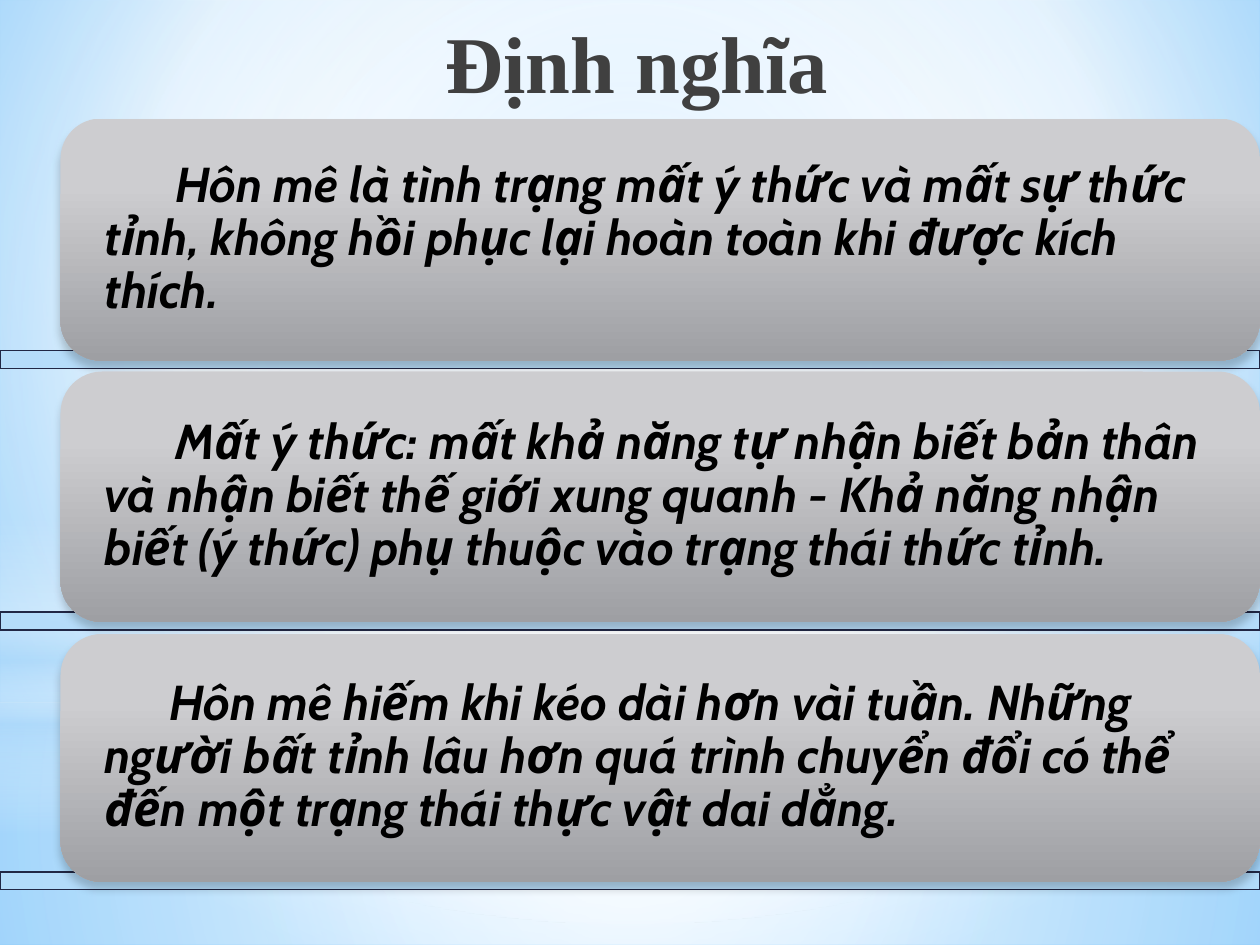
from typing import NamedTuple

from lxml.etree import SubElement as Sub
from pptx import Presentation
from pptx.dml.color import RGBColor as Rgb
from pptx.enum.shapes import MSO_SHAPE as Kind
from pptx.enum.text import MSO_ANCHOR as Anchor, PP_ALIGN as Align
from pptx.oxml import parse_xml
from pptx.oxml.ns import nsdecls, qn
from pptx.util import Cm, Pt

HUES = {
    "white": "FFFFFF", "black": "000000", "title": "404040",
    "sky": "B4DCFA", "navy": "212745", "pale": "9ED5FF", "deep": "5BB9FF",
    "light": "CDCDD0", "dark": "9E9FA3",
}
WIDE, HIGH = 25.4, 19.05


class Stop(NamedTuple):
    pos: int
    hue: str
    alpha: int = 100


class Wash(NamedTuple):
    kind: Kind
    top: float
    high: float
    stops: list[Stop]
    focus: tuple | None = (50, 50, 50, 50)


class Card(NamedTuple):
    top: float
    high: float
    tab: float
    text: str


BACK = [Stop(0, "pale"), Stop(60, "white"), Stop(100, "deep")]
STEEL = [Stop(28, "light"), Stop(100, "dark")]
WASHES = [
    Wash(Kind.RECTANGLE, 14.17, 4.88,
         [Stop(0, "white", 91), Stop(37, "white", 76), Stop(100, "sky", 79)]),
    Wash(Kind.RECTANGLE, 0, 14.17,
         [Stop(0, "white", 89), Stop(48, "white", 62), Stop(100, "sky", 79)]),
    Wash(Kind.RECTANGLE, 10.46, 6.35,
         [Stop(0, "white", 0), Stop(29, "white", 30), Stop(45, "sky", 40),
          Stop(55, "white", 26), Stop(65, "sky", 60), Stop(100, "white", 0)],
         None),
    Wash(Kind.OVAL, 4.45, 14.17, [Stop(0, "white"), Stop(56, "white", 0)]),
]
CARDS = [
    Card(2.39, 4.88, 1.42,
         "Hôn mê là tình trạng mất ý thức và mất sự thức tỉnh, "
         "không hồi phục lại hoàn toàn khi được kích thích."),
    Card(7.49, 5.05, 1.42,
         "Mất ý thức: mất khả năng tự nhận biết bản thân và nhận biết "
         "thế giới xung quanh - Khả năng nhận biết (ý thức) phụ thuộc "
         "vào trạng thái thức tỉnh."),
    Card(12.78, 5, 1.3,
         "Hôn mê hiếm khi kéo dài hơn vài tuần. Những người bất tỉnh lâu "
         "hơn quá trình chuyển đổi có thể đến một trạng thái thực vật "
         "dai dẳng."),
]


def tint(box, hue: str, alpha: int) -> None:
    """Add a colour with its opacity to an XML element."""
    clr = Sub(box, qn("a:srgbClr"), val=HUES[hue])
    if alpha < 100:
        Sub(clr, qn("a:alpha"), val=str(alpha * 1000))


def blend(fill, owner, stops: list[Stop], focus: tuple | None = None) -> None:
    """Give a radial fill around focus, or a downward one without it."""
    fill.solid()
    grad = parse_xml(f'<a:gradFill {nsdecls("a")} rotWithShape="1"/>')
    group = Sub(grad, qn("a:gsLst"))
    for stop in stops:
        tint(Sub(group, qn("a:gs"), pos=str(stop.pos * 1000)),
             stop.hue, stop.alpha)
    if focus:
        ring = Sub(grad, qn("a:path"), path="circle")
        sides = {s: str(v * 1000) for s, v in zip("ltrb", focus)}
        Sub(ring, qn("a:fillToRect"), **sides)
    else:
        Sub(grad, qn("a:lin"), ang="5400000", scaled="0")
    old = owner.find(qn("a:solidFill"))
    owner.replace(old, grad)


def block(slide, kind: Kind, left: float, top: float, wide: float,
          high: float):
    """Add a plain shape without line or shadow."""
    item = slide.shapes.add_shape(kind, Cm(left), Cm(top), Cm(wide), Cm(high))
    item.line.fill.background()
    item.shadow.inherit = False
    return item


def write(frame, text: str, *, font: str, size: float, hue: str,
          italic: bool = False, align: Align = Align.LEFT,
          anchor: Anchor = Anchor.MIDDLE):
    """Fill a text frame with one bold paragraph and return it."""
    frame.word_wrap = True
    frame.vertical_anchor = anchor
    para = frame.paragraphs[0]
    para.alignment = align
    run = para.add_run()
    run.text = text
    run.font.name, run.font.size = font, Pt(size)
    run.font.bold, run.font.italic = True, italic
    run.font.color.rgb = Rgb.from_string(HUES[hue])
    return para


def draw_wash(slide, wash: Wash) -> None:
    item = block(slide, wash.kind, 0, wash.top, WIDE, wash.high)
    blend(item.fill, item._element.spPr, wash.stops, wash.focus)


def draw_card(slide, card: Card) -> None:
    # Thin bar behind the lower edge
    bar = block(slide, Kind.RECTANGLE, 0, card.top + card.high - 0.2,
                WIDE, 0.36)
    bar.fill.solid()
    bar.fill.fore_color.rgb = Rgb.from_string(HUES["sky"])
    clr = bar._element.spPr.find(qn("a:solidFill"))[0]
    Sub(clr, qn("a:alpha"), val="90000")
    bar.line.color.rgb = Rgb.from_string(HUES["navy"])
    bar.line.width = Pt(0.75)

    # Rounded panel with a soft shadow
    panel = block(slide, Kind.ROUNDED_RECTANGLE, 1.22, card.top,
                  WIDE - 1.22, card.high)
    props = panel._element.spPr
    blend(panel.fill, props, STEEL)
    shade = Sub(props.find(qn("a:effectLst")), qn("a:outerShdw"),
                blurRad=str(Pt(5)), dist=str(Pt(4)), dir="5400000",
                rotWithShape="0")
    tint(shade, "black", 20)

    # Wording, first line set in by a tab
    box = slide.shapes.add_textbox(Cm(1.45), Cm(card.top + 0.24), Cm(23.7),
                                   Cm(card.high - 0.48))
    frame = box.text_frame
    frame.margin_left = frame.margin_right = Cm(0.66)
    frame.margin_top = frame.margin_bottom = 0
    para = write(frame, "\t" + card.text, font="Cabin", size=28,
                 hue="black", italic=True)
    para.line_spacing = 0.9
    tabs = Sub(para._p.get_or_add_pPr(), qn("a:tabLst"))
    Sub(tabs, qn("a:tab"), pos=str(Cm(card.tab)), algn="l")


def main() -> None:
    deck = Presentation()
    deck.slide_width, deck.slide_height = Cm(WIDE), Cm(HIGH)
    slide = deck.slides.add_slide(deck.slide_layouts[5])

    # Background
    fill = slide.background.fill
    fill.solid()
    blend(fill, slide._element.find(".//" + qn("p:bgPr")), BACK,
          (20, 10, 20, 60))
    for wash in WASHES:
        draw_wash(slide, wash)

    # Title, raised above the washes
    title = slide.shapes.title
    title.left, title.top = Cm(5.51), Cm(0)
    title.width, title.height = Cm(11.43), Cm(2.34)
    write(title.text_frame, "Định nghĩa", font="Times New Roman", size=46,
          hue="title", align=Align.RIGHT, anchor=Anchor.BOTTOM)
    slide.shapes._spTree.append(title._element)

    # Cards
    for card in CARDS:
        draw_card(slide, card)

    deck.save("out.pptx")


if __name__ == "__main__":
    main()
